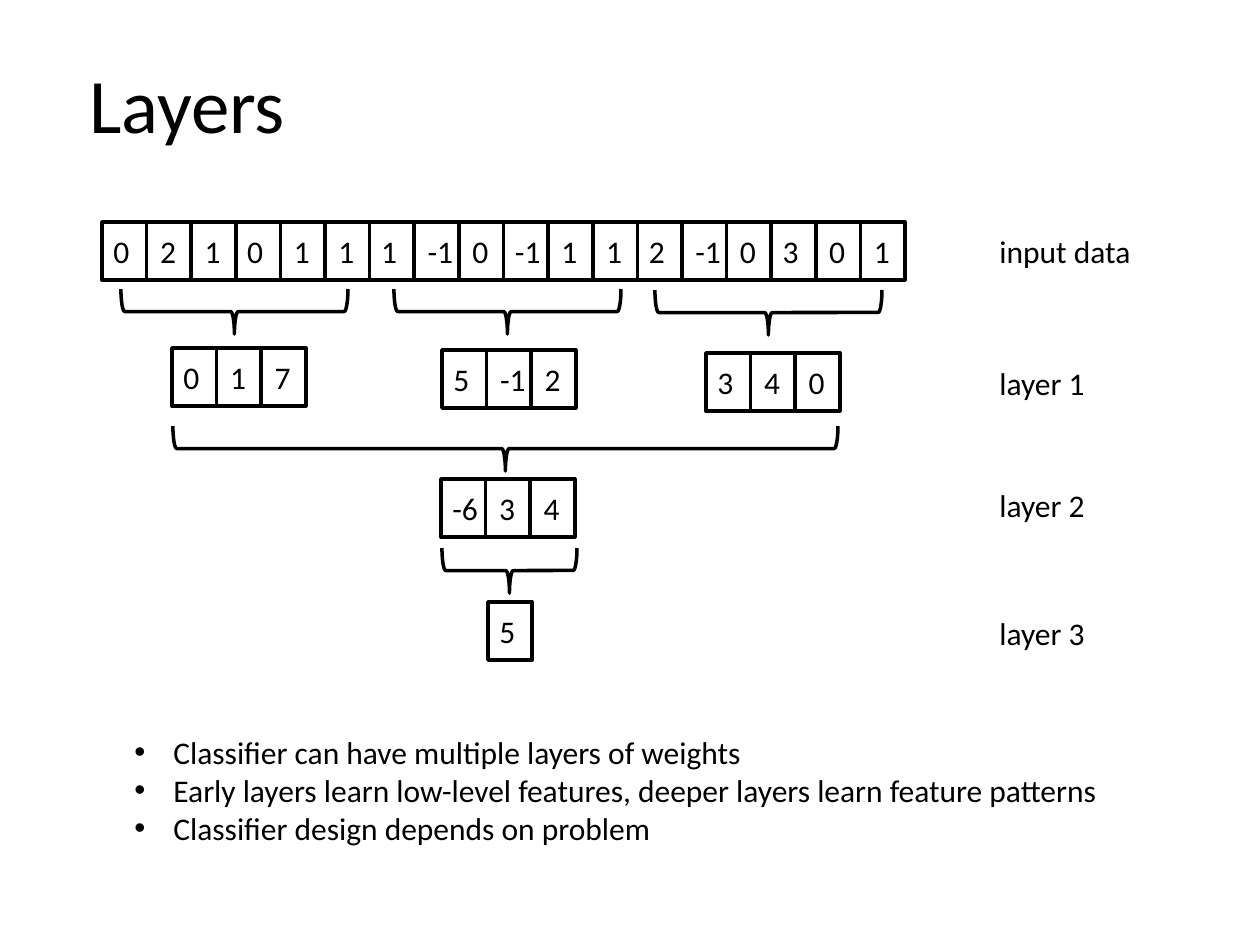
from dataclasses import dataclass

from lxml import etree
from pptx import Presentation
from pptx import util as u
from pptx.dml.color import RGBColor
from pptx.enum import shapes, text
from pptx.oxml.ns import qn

PX = 914400 / 126  # EMU per px
CELL_H = 58
LABEL_H = 50
BRACE_H = 45
LABEL_X = 987
INDENT = 39


@dataclass(frozen=True)
class Theme:
    font: str = "Calibri"
    ink: RGBColor = RGBColor(0, 0, 0)
    title: int = 44
    body: int = 18
    line: int = 2


T = Theme()


def px(n):
    return u.Emu(round(n * PX))


def box(*lengths):
    return [px(n) for n in lengths]


def add_text(parent, lines, x, y, w, h, size=T.body, wrap=True):
    sp = parent.shapes.add_textbox(*box(x, y, w, h))
    tf = sp.text_frame
    tf.text = lines
    tf.word_wrap = wrap
    tf.auto_size = text.MSO_AUTO_SIZE.SHAPE_TO_FIT_TEXT
    for p in tf.paragraphs:
        for r in p.runs:
            r.font.name = T.font
            r.font.size = u.Pt(size)
            r.font.color.rgb = T.ink
    return sp


def add_outline(parent, kind, x, y, w, h):
    sp = parent.shapes.add_shape(kind, *box(x, y, w, h))
    sp.shadow.inherit = False
    sp.fill.background()
    sp.line.color.rgb = T.ink
    sp.line.width = u.Pt(T.line)
    return sp


def add_row(s, x, y, width, values):
    """A strip of equal cells, each grouped with its number."""
    pitch = width / len(values)
    for i, value in enumerate(values):
        left = x + i * pitch
        nudge = 1 if i % 3 else -1
        text_w = 52 if value < 0 else 42
        g = s.shapes.add_group_shape()
        add_outline(g, shapes.MSO_SHAPE.RECTANGLE, left, y, pitch, CELL_H)
        add_text(g, str(value), left + nudge, y + 4, text_w, LABEL_H, wrap=False)


def add_brace(s, x, y, width):
    """A brace opening upwards: a left brace turned about its centre."""
    shift = (width - BRACE_H) / 2
    sp = add_outline(s, shapes.MSO_SHAPE.LEFT_BRACE,
                     x + shift, y - shift, BRACE_H, width)
    sp.rotation = 270


def add_bullets(s, lines, x, y, w, h):
    sp = add_text(s, "\n".join(lines), x, y, w, h)
    for p in sp.text_frame.paragraphs:
        pPr = p._p.get_or_add_pPr()
        pPr.set("marL", str(px(INDENT)))
        pPr.set("indent", str(-px(INDENT)))
        etree.SubElement(pPr, qn("a:buFont")).set("typeface", "Arial")
        etree.SubElement(pPr, qn("a:buChar")).set("char", "•")


def main():
    prs = Presentation()
    prs.slide_width, prs.slide_height = box(1260, 945)
    s = prs.slides.add_slide(prs.slide_layouts[6])

    add_text(s, "Layers", 77, 50, 223, 106, T.title, wrap=False)

    # Numbers of each layer
    add_row(s, 102, 222, 803,
            [0, 2, 1, 0, 1, 1, 1, -1, 0, -1, 1, 1, 2, -1, 0, 3, 0, 1])
    add_row(s, 172, 348, 134, [0, 1, 7])
    add_row(s, 442, 350, 134, [5, -1, 2])
    add_row(s, 706, 353, 134, [3, 4, 0])
    add_row(s, 441, 479, 134, [-6, 3, 4])
    add_row(s, 488, 602, 44, [5])

    # Braces that gather one layer into the next
    for x, y, width in [(121, 289, 227), (394, 289, 227), (655, 290, 227),
                        (173, 426, 665), (442, 548, 135)]:
        add_brace(s, x, y, width)

    # Layer names
    for label, y, width in [("input data", 226, 171), ("layer 1", 358, 120),
                            ("layer 2", 480, 120), ("layer 3", 608, 120)]:
        add_text(s, label, LABEL_X, y, width, LABEL_H)

    # Takeaways
    add_bullets(s, [
        "Classifier can have multiple layers of weights",
        "Early layers learn low-level features, deeper layers learn feature patterns",
        "Classifier design depends on problem",
    ], 122, 727, 1048, 127)

    prs.save("out.pptx")


if __name__ == "__main__":
    main()
